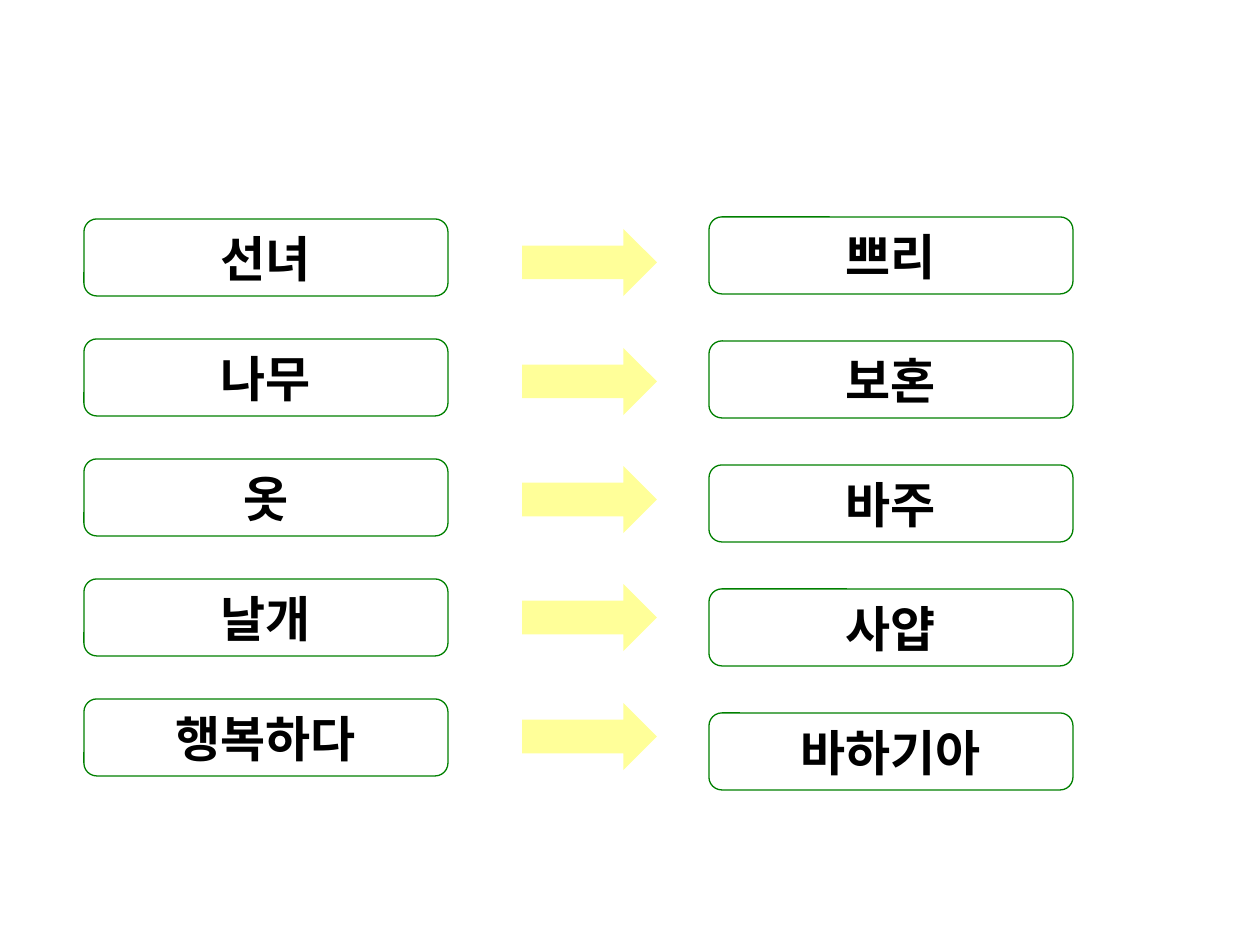
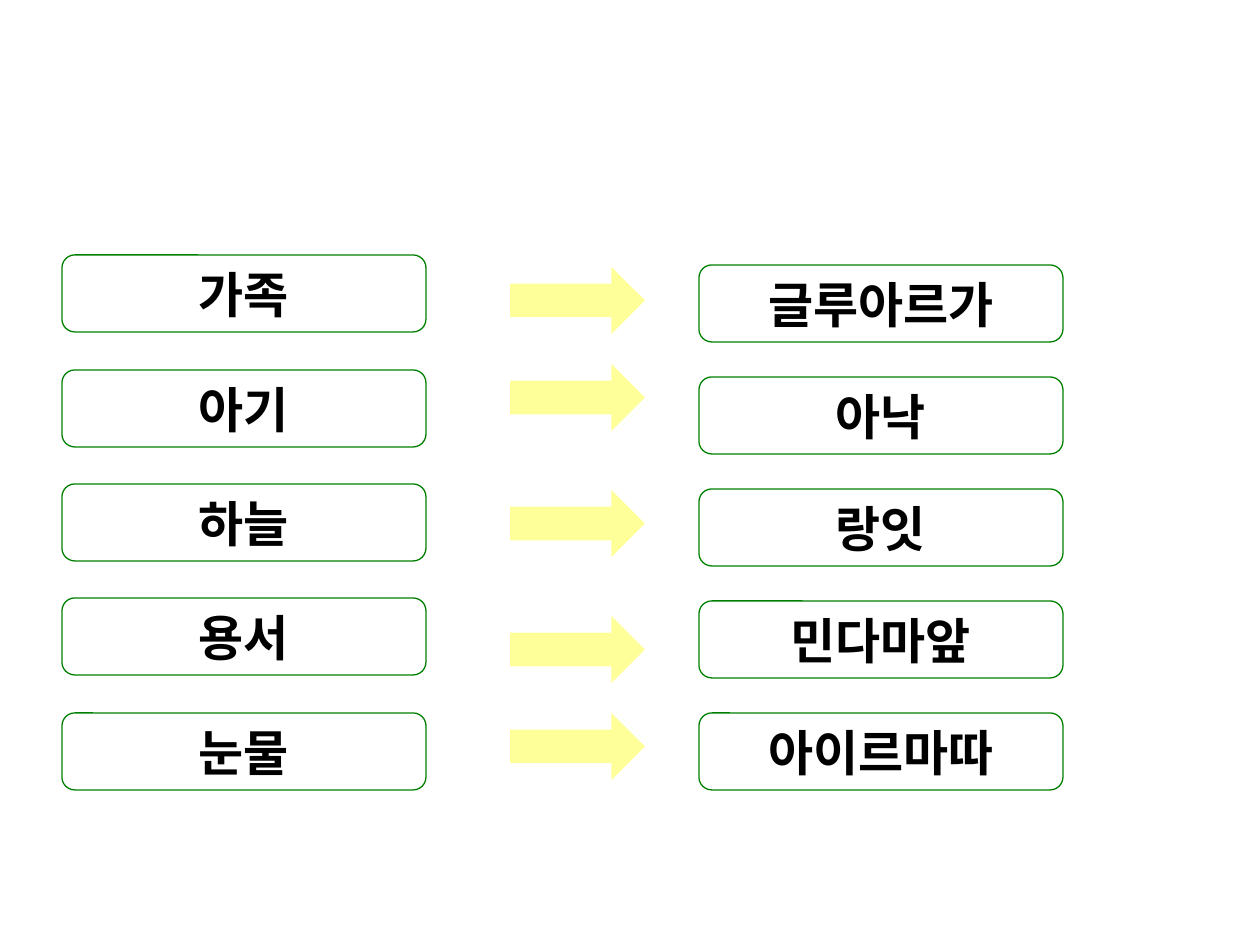
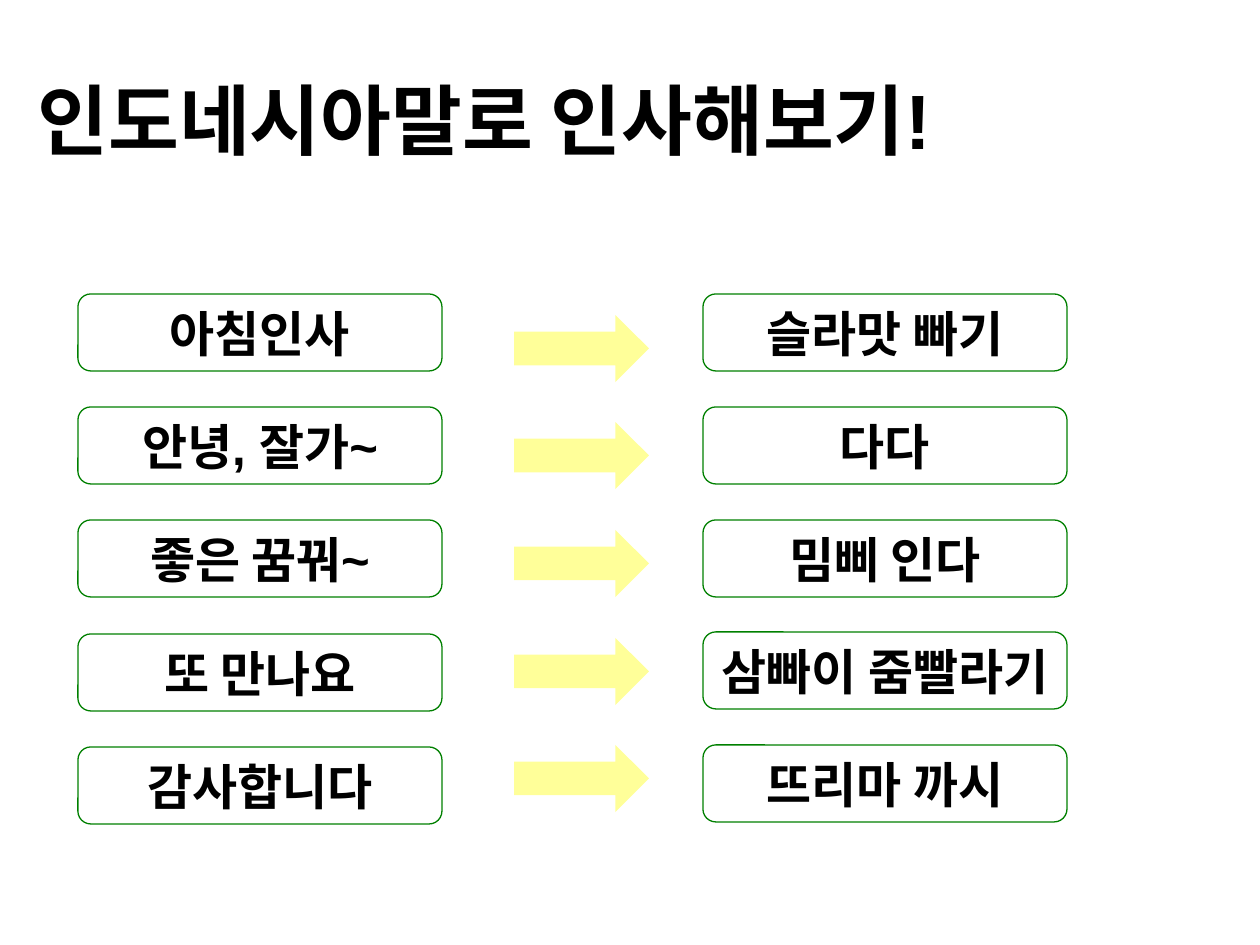
from lxml import etree
from pptx import Presentation
from pptx.dml.color import RGBColor
from pptx.enum.shapes import MSO_SHAPE
from pptx.enum.text import MSO_ANCHOR, MSO_AUTO_SIZE, PP_ALIGN
from pptx.oxml.ns import qn
from pptx.util import Inches, Pt

ROUNDED = MSO_SHAPE.ROUNDED_RECTANGLE
ARROW = MSO_SHAPE.RIGHT_ARROW
MIDDLE = MSO_ANCHOR.MIDDLE
GROW = MSO_AUTO_SIZE.SHAPE_TO_FIT_TEXT
CENTER = PP_ALIGN.CENTER
LEFT = PP_ALIGN.LEFT

PX_PER_INCH = 126
KOREAN_FONT = "Noto Sans CJK KR"
INK = "000000"
BORDER = "008000"
ARROW_FILL = "FFFF99"
WORD_SIZE = (364, 77)
ARROW_SIZE = (135, 67)

LESSONS = [
    {
        "font": KOREAN_FONT,
        "korean": (84, (219, 699), ["선녀", "나무", "옷", "날개", "행복하다"]),
        "indonesian": (709, (217, 713), ["쁘리", "보혼", "바주", "사얍", "바하기아"]),
        "arrows": (522, (229, 703)),
    },
    {
        "font": KOREAN_FONT,
        "korean": (62, (255, 713), ["가족", "아기", "하늘", "용서", "눈물"]),
        "indonesian": (699, (265, 713), ["글루아르가", "아낙", "랑잇", "민다마앞", "아이르마따"]),
        "arrows": (510, (267, 364, 490, 616, 713)),
    },
    {
        "font": "Arial",
        "title": "인도네시아말로 인사해보기!",
        "korean": (78, (294, 747), ["아침인사", "안녕, 잘가~", "좋은 꿈꿔~", "또 만나요", "감사합니다"]),
        "indonesian": (703, (294, 745), ["슬라맛 빠기", "다다", "밈삐 인다", "삼빠이 줌빨라기", "뜨리마 까시"]),
        "arrows": (514, (315, 745)),
    },
]


def px(length):
    return round(length * Inches(1) / PX_PER_INCH)


def color(hex_value):
    return RGBColor.from_string(hex_value)


def row_tops(tops, count=5):
    if len(tops) == count:
        return tops
    first, last = tops
    return [round(first + row * (last - first) / (count - 1)) for row in range(count)]


class Lesson:
    def __init__(self, deck, font):
        self.font = font
        self.slide = deck.slides.add_slide(deck.slide_layouts[6])

    def add_words(self, frame, text, size, align):
        frame.word_wrap = False
        paragraph = frame.paragraphs[0]
        paragraph.alignment = align
        run = paragraph.add_run()
        run.text = text
        run.font.size = Pt(size)
        run.font.bold = True
        run.font.name = self.font
        run.font.color.rgb = color(INK)
        east_asian = etree.SubElement(run._r.get_or_add_rPr(), qn("a:ea"))
        east_asian.set("typeface", KOREAN_FONT)

    def shape(self, kind, left, top, size):
        shape = self.slide.shapes.add_shape(kind, px(left), px(top), *map(px, size))
        shape.shadow.inherit = False
        return shape

    def title(self, text):
        heading = self.slide.shapes.add_textbox(px(25), px(66), px(1010), px(106))
        self.add_words(heading.text_frame, text, 44, LEFT)
        heading.text_frame.auto_size = GROW

    def word_column(self, left, tops, words):
        for top, word in zip(row_tops(tops), words):
            card = self.shape(ROUNDED, left, top, WORD_SIZE)
            card.fill.background()
            card.line.color.rgb = color(BORDER)
            card.line.width = Pt(0.75)
            card.text_frame.vertical_anchor = MIDDLE
            self.add_words(card.text_frame, word, 28, CENTER)

    def arrow_column(self, left, tops):
        for top in row_tops(tops):
            arrow = self.shape(ARROW, left, top, ARROW_SIZE)
            arrow.fill.solid()
            arrow.fill.fore_color.rgb = color(ARROW_FILL)
            arrow.line.fill.background()


def main():
    deck = Presentation()
    deck.slide_width, deck.slide_height = px(1260), px(945)
    for content in LESSONS:
        lesson = Lesson(deck, content["font"])
        if "title" in content:
            lesson.title(content["title"])
        lesson.word_column(*content["korean"])
        lesson.word_column(*content["indonesian"])
        lesson.arrow_column(*content["arrows"])
    deck.save("out.pptx")


if __name__ == "__main__":
    main()
